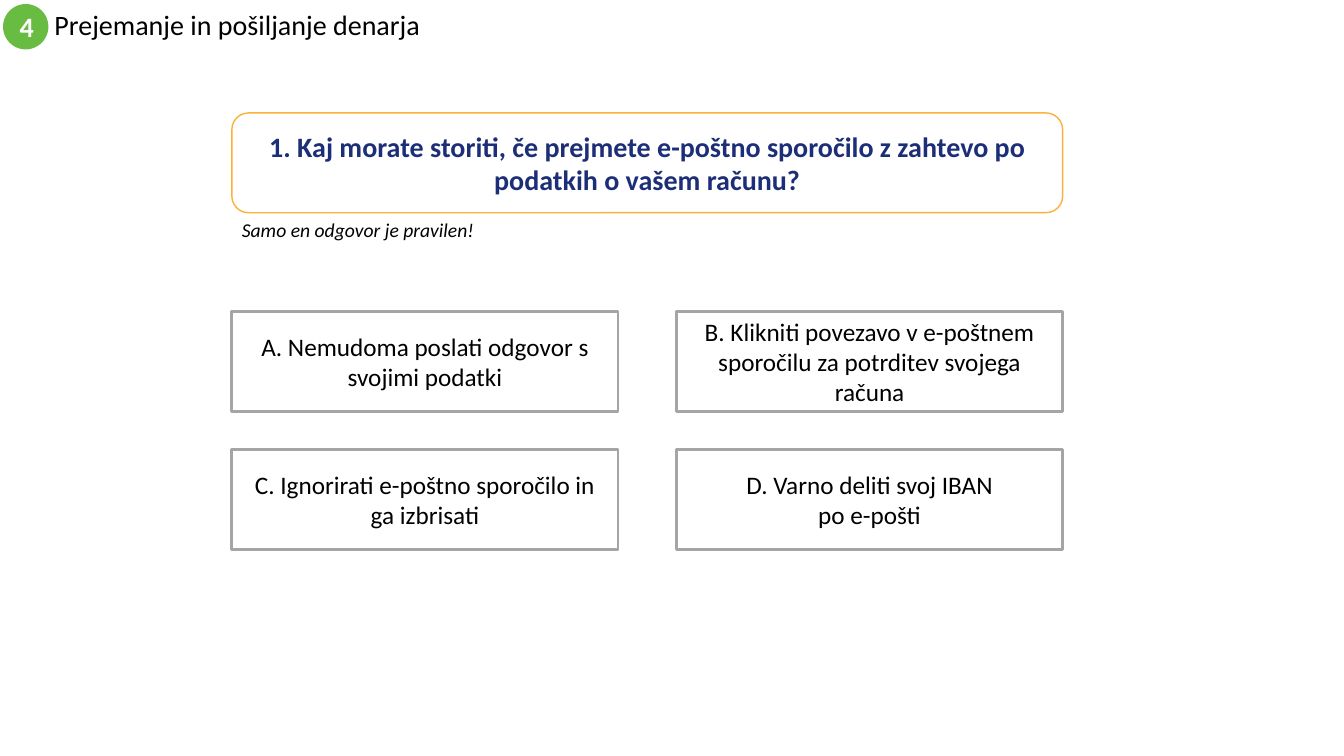
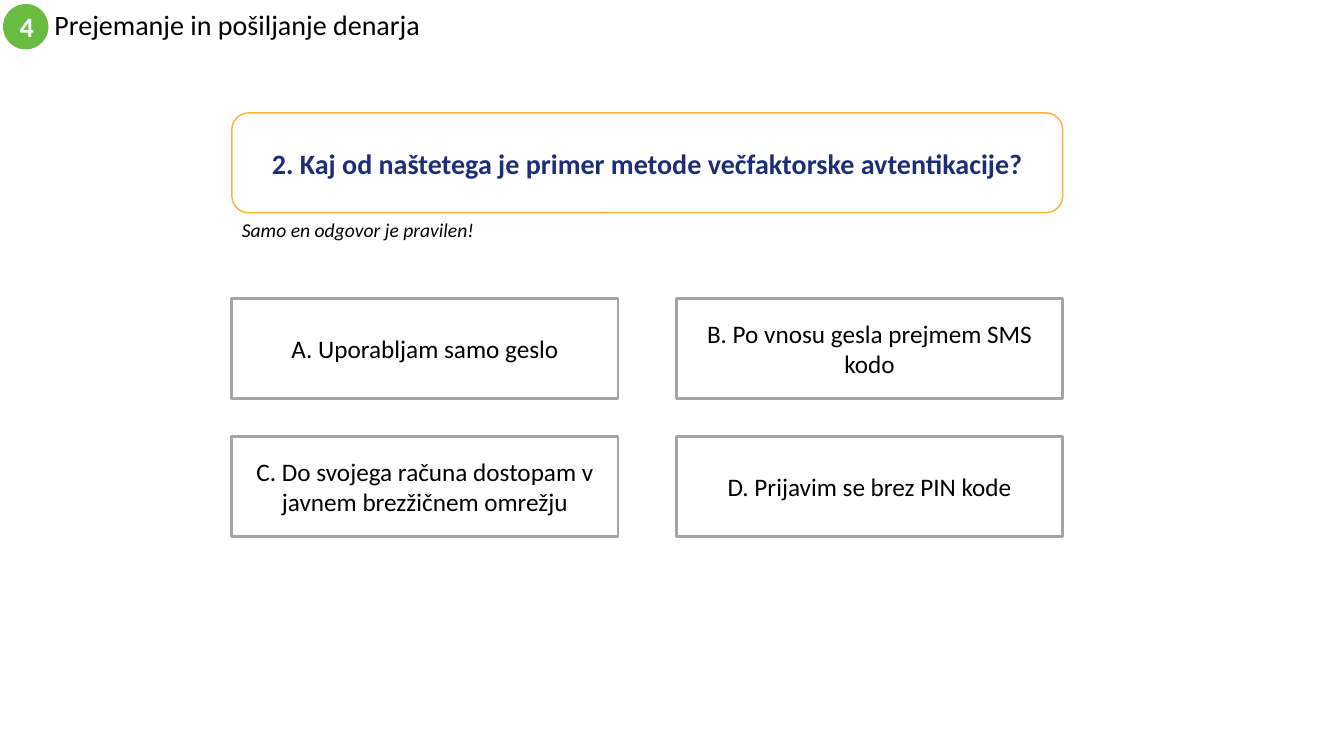
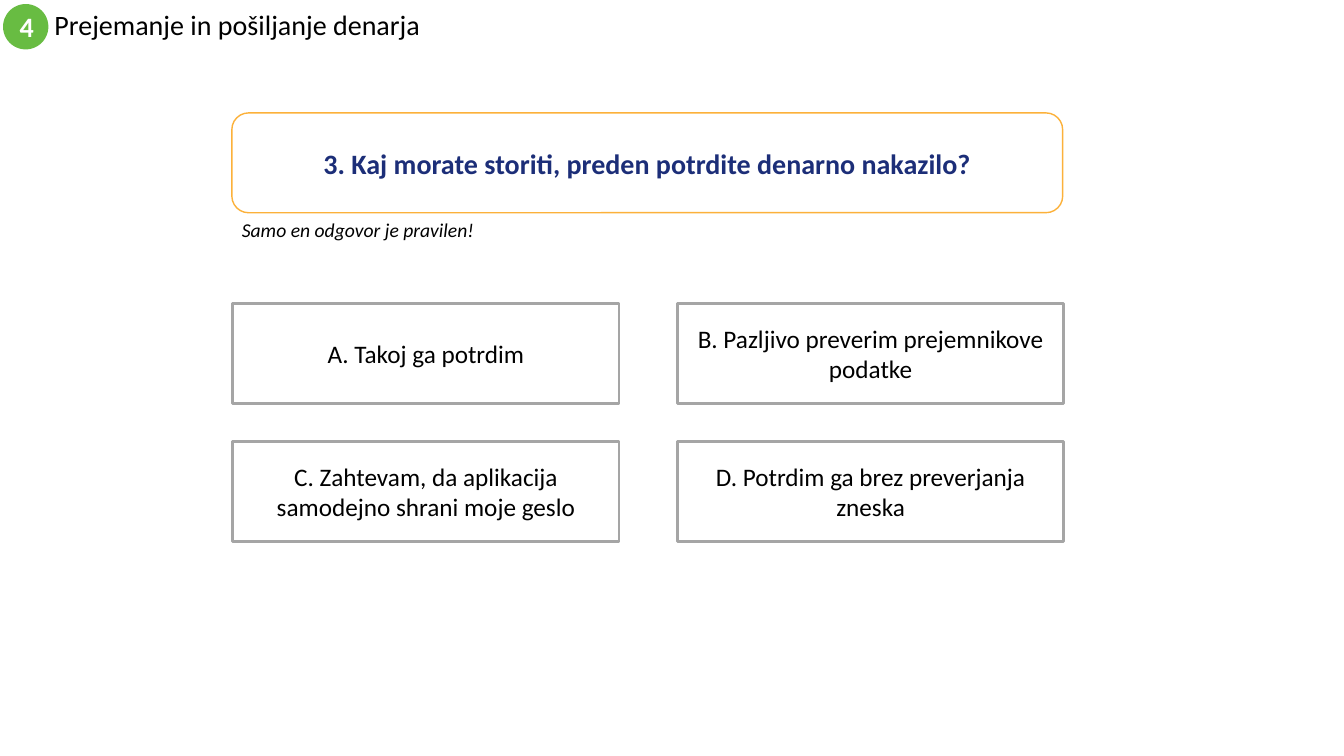
from pptx import Presentation
from pptx.dml.color import RGBColor
from pptx.enum.shapes import MSO_SHAPE
from pptx.enum.text import MSO_ANCHOR, MSO_AUTO_SIZE, PP_ALIGN
from pptx.util import Inches, Pt

OVAL, ROUND, RECT = MSO_SHAPE.OVAL, MSO_SHAPE.ROUNDED_RECTANGLE, MSO_SHAPE.RECTANGLE
LEFT, CENTER = PP_ALIGN.LEFT, PP_ALIGN.CENTER
TOP, MIDDLE = MSO_ANCHOR.TOP, MSO_ANCHOR.MIDDLE
FIXED = MSO_AUTO_SIZE.NONE

FONT = "Calibri"
BLACK, WHITE, GREEN = "000000", "FFFFFF", "68BC42"
NAVY, AMBER, GREY = "1C2E78", "FCB13A", "A5A5A5"

# Question, left and top of the answer grid, answers
QUIZ = [
    ("1. Kaj morate storiti, če prejmete e-poštno sporočilo z zahtevo po podatkih o vašem računu?",
     2.3, 3.09,
     ["A. Nemudoma poslati odgovor s svojimi podatki",
      "B. Klikniti povezavo v e-poštnem sporočilu za potrditev svojega računa",
      "C. Ignorirati e-poštno sporočilo in ga izbrisati",
      "D. Varno deliti svoj IBAN\vpo e-pošti"]),
    ("2. Kaj od naštetega je primer metode večfaktorske avtentikacije?",
     2.3, 2.96,
     ["A. Uporabljam samo geslo",
      "B. Po vnosu gesla prejmem SMS kodo",
      "C. Do svojega računa dostopam v javnem brezžičnem omrežju",
      "D. Prijavim se brez PIN kode"]),
    ("3. Kaj morate storiti, preden potrdite denarno nakazilo?",
     2.31, 3.01,
     ["A. Takoj ga potrdim",
      "B. Pazljivo preverim prejemnikove podatke",
      "C. Zahtevam, da aplikacija samodejno shrani moje geslo",
      "D. Potrdim ga brez preverjanja zneska"]),
]


def color(code):
    return RGBColor.from_string(code)


def write(shape, text, size=18, ink=BLACK, bold=False, italic=False,
          align=CENTER, anchor=MIDDLE, lead=None):
    frame = shape.text_frame
    frame.word_wrap = True
    frame.auto_size = FIXED
    frame.vertical_anchor = anchor
    frame.margin_left = frame.margin_right = Inches(0.1)
    frame.margin_top = frame.margin_bottom = Inches(0.05)
    para = frame.paragraphs[0]
    para.text = text
    para.alignment = align
    if lead:
        para.line_spacing = lead
    for run in para.runs:
        font = run.font
        font.name, font.size = FONT, Pt(size)
        font.bold, font.italic = bold, italic
        font.color.rgb = color(ink)


class Deck:
    def __init__(self):
        self.file = Presentation()
        self.file.slide_width = Inches(13.33)
        self.file.slide_height = Inches(7.5)
        self.slide = None

    def page(self, title, mark):
        layout = self.file.slide_layouts[5]
        self.slide = self.file.slides.add_slide(layout)
        head = self.slide.shapes.title
        head.left, head.top = Inches(0.44), Inches(0.04)
        head.width, head.height = Inches(8), Inches(0.45)
        write(head, title, size=20, align=LEFT, lead=0.9)
        badge = self.box(OVAL, 0.03, 0.04, 0.45, 0.45, fill=GREEN)
        write(badge, mark, size=20, ink=WHITE, bold=True)

    def box(self, kind, left, top, width, height, fill=WHITE, line=None, weight=1):
        shape = self.slide.shapes.add_shape(
            kind, Inches(left), Inches(top), Inches(width), Inches(height))
        shape.shadow.inherit = False
        shape.fill.solid()
        shape.fill.fore_color.rgb = color(fill)
        if line:
            shape.line.color.rgb = color(line)
            shape.line.width = Pt(weight)
        else:
            shape.line.fill.background()
        return shape

    def ask(self, text):
        panel = self.box(ROUND, 2.3, 1.12, 8.24, 0.99, line=AMBER)
        write(panel, text, size=20, ink=NAVY, bold=True)

    def hint(self, text):
        note = self.slide.shapes.add_textbox(
            Inches(2.3), Inches(2.11), Inches(3.04), Inches(0.57))
        write(note, text, size=14, italic=True, align=LEFT, anchor=TOP)

    def grid(self, left, top, items):
        for i, text in enumerate(items):
            row, col = divmod(i, 2)
            cell = self.box(RECT, left + col * 4.41, top + row * 1.37, 3.83, 0.99,
                            line=GREY, weight=2)
            write(cell, text)


def main():
    deck = Deck()
    for query, left, top, items in QUIZ:
        deck.page("Prejemanje in pošiljanje denarja", "4")
        deck.ask(query)
        deck.hint("Samo en odgovor je pravilen!")
        deck.grid(left, top, items)
    deck.file.save("out.pptx")


if __name__ == "__main__":
    main()
